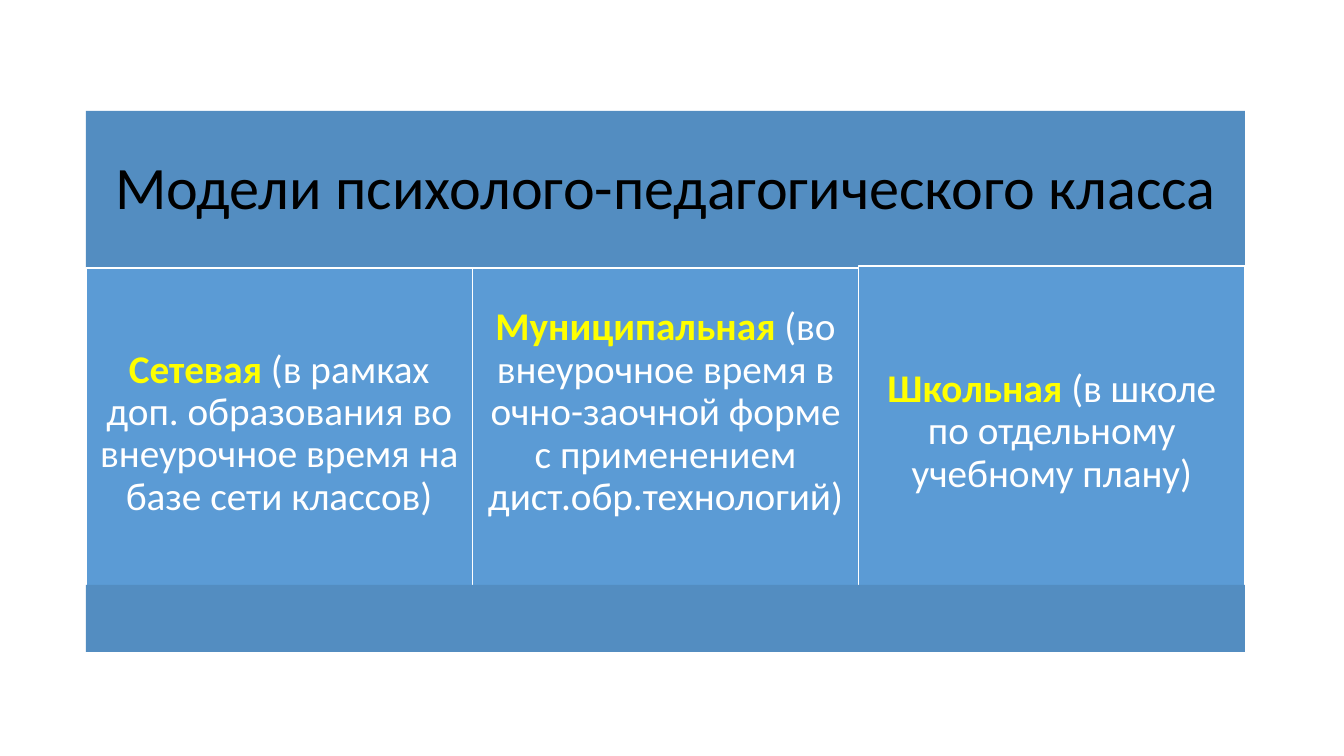
import pptx
import pptx.dml.color
import pptx.enum.shapes
import pptx.enum.text
import pptx.util

PX = 914400 / 100.8
COLORS = {"band": "538DC1", "card": "5B9BD5", "white": "FFFFFF", "black": "000000", "accent": "FFFF00"}
MODELS = [
    ("Сетевая", " (в рамках доп. образования во внеурочное время на базе сети классов)", 0, 12),
    ("Муниципальная", " (во внеурочное время в очно-заочной форме с применением дист.обр.технологий)", 0, 54),
    ("Школьная", " (в школе по отдельному учебному плану)", -2, 12),
]


def px(length):
    """Turn pixels into EMU."""
    return pptx.util.Emu(round(length * PX))


def color(name):
    """Look up a named colour."""
    return pptx.dml.color.RGBColor.from_string(COLORS[name])


def place(shape, box, fill):
    """Move a shape to its box and give it a plain fill."""
    shape.left, shape.top, shape.width, shape.height = map(px, box)
    shape.fill.solid()
    shape.fill.fore_color.rgb = color(fill)


def add_rectangle(slide, box, fill, line=None):
    """Add a flat rectangle, outlined if a line colour is given."""
    shape = slide.shapes.add_shape(pptx.enum.shapes.MSO_SHAPE.RECTANGLE, *map(px, box))
    shape.shadow.inherit = False
    place(shape, box, fill)
    if line:
        shape.line.color.rgb = color(line)
        shape.line.width = pptx.util.Pt(1)
    else:
        shape.line.fill.background()
    return shape


def add_text(paragraph, text, size=28, fill="white", bold=False):
    """Append a formatted run to a paragraph."""
    run = paragraph.add_run()
    run.text = text
    run.font.name = "Calibri"
    run.font.size = pptx.util.Pt(size)
    run.font.bold = bold
    run.font.color.rgb = color(fill)


def centred_paragraph(shape, inset, bottom):
    """Prepare a shape's text frame and return its centred paragraph."""
    frame = shape.text_frame
    frame.auto_size = pptx.enum.text.MSO_AUTO_SIZE.NONE
    frame.word_wrap = True
    frame.vertical_anchor = pptx.enum.text.MSO_ANCHOR.MIDDLE
    frame.margin_left = frame.margin_right = frame.margin_top = px(inset)
    frame.margin_bottom = px(bottom)
    paragraph = frame.paragraphs[0]
    paragraph.alignment = pptx.enum.text.PP_ALIGN.CENTER
    paragraph.line_spacing = 0.9
    return paragraph


def build_header(slide, box):
    """Format the title placeholder as the top band."""
    title = slide.shapes.title
    place(title, box, "band")
    add_text(centred_paragraph(title, 18, 18), "Модели психолого-педагогического класса", size=43, fill="black")


def build_models(slide, box):
    """Fill the box with one equal column per model."""
    left, top, width, height = box
    column = width / len(MODELS)
    for index, (name, details, shift, bottom) in enumerate(MODELS):
        card = add_rectangle(slide, (left + index * column, top + shift, column, height), "card", "white")
        paragraph = centred_paragraph(card, 12, bottom)
        add_text(paragraph, name, fill="accent", bold=True)
        add_text(paragraph, details)


def main():
    """Build and save the slide."""
    presentation = pptx.Presentation()
    presentation.slide_width, presentation.slide_height = px(1344), px(756)
    slide = presentation.slides.add_slide(presentation.slide_layouts[5])
    build_header(slide, (86, 111, 1159, 158))
    build_models(slide, (86, 268, 1159, 332))
    add_rectangle(slide, (86, 585, 1159, 67), "band")
    presentation.save("out.pptx")


if __name__ == "__main__":
    main()
